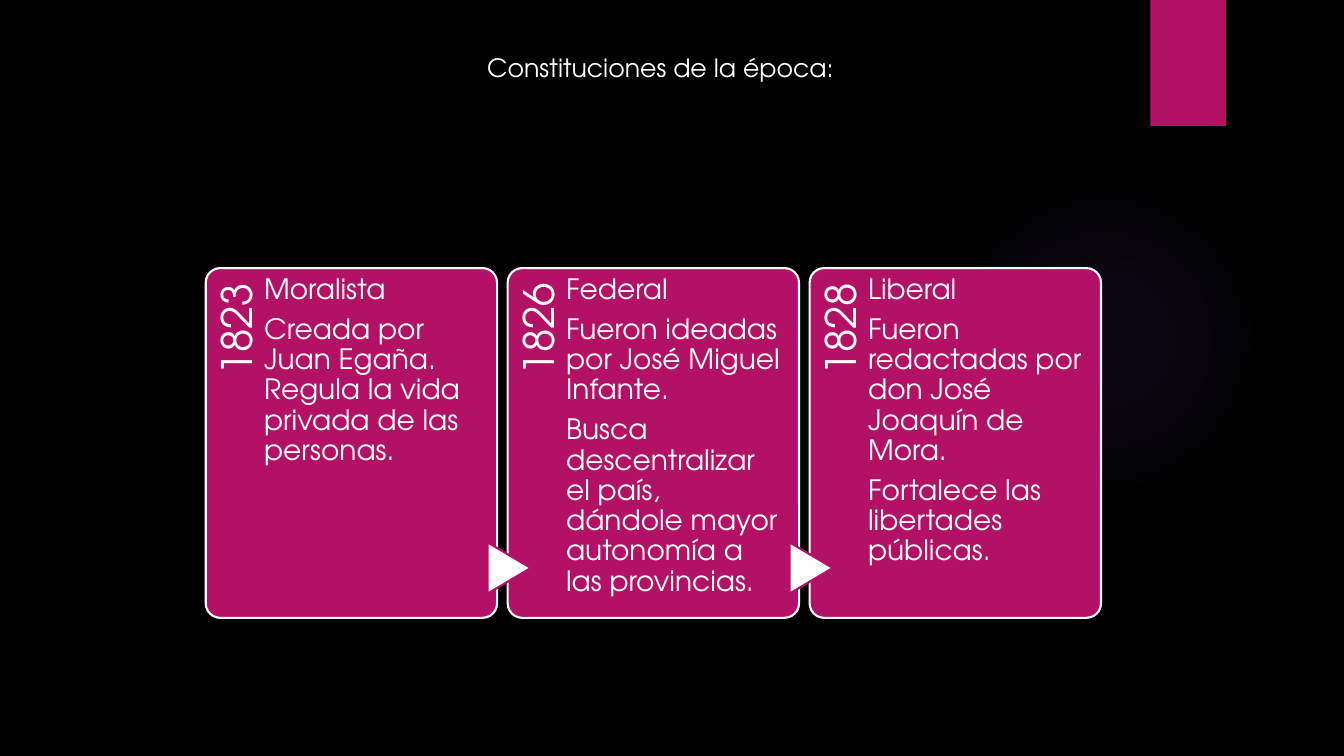
from dataclasses import dataclass

from lxml import etree
from pptx import Presentation
from pptx.dml.color import RGBColor
from pptx.enum.shapes import MSO_SHAPE
from pptx.enum.text import MSO_ANCHOR, MSO_AUTO_SIZE, PP_ALIGN
from pptx.oxml import parse_xml
from pptx.oxml.ns import nsdecls
from pptx.util import Inches, Pt

RECTANGLE = MSO_SHAPE.RECTANGLE
ROUNDED = MSO_SHAPE.ROUNDED_RECTANGLE
TRIANGLE = MSO_SHAPE.FLOWCHART_EXTRACT
OVAL = MSO_SHAPE.OVAL
TOP = MSO_ANCHOR.TOP
GROW = MSO_AUTO_SIZE.SHAPE_TO_FIT_TEXT
FIXED = MSO_AUTO_SIZE.NONE
LEFT, CENTER, RIGHT = PP_ALIGN.LEFT, PP_ALIGN.CENTER, PP_ALIGN.RIGHT


@dataclass(frozen=True)
class Theme:
    """Colours, font and type sizes of the slide."""
    background: str = "000000"
    accent: str = "B31166"
    light: str = "FFFFFF"
    glow: str = "9B6BF2"
    font: str = "TeX Gyre Adventor"
    title: int = 18
    body: int = 20
    year: int = 30
    outline: float = 1.5


@dataclass(frozen=True)
class Area:
    """A rectangle on the slide, in inches."""
    left: float
    top: float
    width: float
    height: float

    def lengths(self) -> list:
        """Return the four measures as lengths."""
        return [Inches(n) for n in (self.left, self.top, self.width, self.height)]


@dataclass(frozen=True)
class Constitution:
    """The year of a constitution and the paragraphs about it."""
    year: str
    paragraphs: tuple[str, ...]


THEME = Theme()
CARD = Area(2.04, 2.66, 2.89, 3.47)
CARD_STEP = 2.995
GLOW_STOPS = ((0, 7), (36, 6), (69, 0))
CONSTITUTIONS = (
    Constitution("1823", (
        "Moralista",
        "Creada por Juan Egaña. Regula la vida privada de las personas.")),
    Constitution("1826", (
        "Federal",
        "Fueron ideadas por José Miguel Infante.",
        "Busca descentralizar el país, dándole mayor autonomía a las provincias.")),
    Constitution("1828", (
        "Liberal",
        "Fueron redactadas por don José Joaquín de Mora.",
        "Fortalece las libertades públicas.")),
)


def add_block(page, kind, area: Area, fill: str, line: str | None = None):
    """Add a flat filled shape, outlined when a line colour is given."""
    block = page.shapes.add_shape(kind, *area.lengths())
    block.shadow.inherit = False
    block.fill.solid()
    block.fill.fore_color.rgb = RGBColor.from_string(fill)
    if line:
        block.line.color.rgb = RGBColor.from_string(line)
        block.line.width = Pt(THEME.outline)
    else:
        block.line.fill.background()
    return block


def add_text(page, area: Area, paragraphs: tuple[str, ...], *, size: int,
             align=LEFT, insets=(0.1, 0.05, 0.1, 0.05), spacing: float = 1.0,
             after: float = 0, rotation: int = 0, fit=FIXED) -> None:
    """Add a wrapped text box with one format for all its paragraphs."""
    box = page.shapes.add_textbox(*area.lengths())
    box.rotation = rotation
    frame = box.text_frame
    frame.word_wrap = True
    frame.auto_size = fit
    frame.vertical_anchor = TOP
    (frame.margin_left, frame.margin_top,
     frame.margin_right, frame.margin_bottom) = [Inches(n) for n in insets]
    for index, text in enumerate(paragraphs):
        para = frame.add_paragraph() if index else frame.paragraphs[0]
        para.alignment = align
        para.line_spacing = spacing
        para.space_after = Pt(after)
        span = para.add_run()
        span.text = text
        span.font.name = THEME.font
        span.font.size = Pt(size)
        span.font.color.rgb = RGBColor.from_string(THEME.light)


def add_glow(page) -> None:
    """Add the faint circle that fades out towards its edge."""
    glow = add_block(page, OVAL, Area(9.41, 1.83, 3.08, 3.08), THEME.glow)
    stops = "".join(
        f'<a:gs pos="{position * 1000}"><a:srgbClr val="{THEME.glow}">'
        f'<a:alpha val="{opacity * 1000}"/></a:srgbClr></a:gs>'
        for position, opacity in GLOW_STOPS)
    gradient: etree.ElementBase = parse_xml(
        f'<a:gradFill {nsdecls("a")}><a:gsLst>{stops}</a:gsLst><a:path path="circle">'
        '<a:fillToRect l="50000" t="50000" r="50000" b="50000"/></a:path></a:gradFill>')
    properties = glow.fill._xPr
    properties.replace(properties.solidFill, gradient)


def add_card(page, index: int, constitution: Constitution) -> None:
    """Add one card, with an arrow from the card before it."""
    left = CARD.left + index * CARD_STEP
    card = add_block(page, ROUNDED, Area(left, CARD.top, CARD.width, CARD.height),
                     THEME.accent, THEME.light)
    card.adjustments[0] = 0.05
    add_text(page, Area(left - 1.14, 3.79, 2.85, 0.58), (constitution.year,),
             size=THEME.year, align=RIGHT, insets=(0, 0.11, 0.15, 0),
             spacing=0.9, rotation=270)
    if index:
        arrow = add_block(page, TRIANGLE, Area(left - 0.24, 5.42, 0.51, 0.43),
                          THEME.light, THEME.accent)
        arrow.rotation = 90
    add_text(page, Area(left + 0.58, CARD.top, 2.16, CARD.height),
             constitution.paragraphs, size=THEME.body, insets=(0, 0.07, 0, 0),
             spacing=0.9, after=7)


def main() -> None:
    """Build the slide and save it."""
    deck = Presentation()
    deck.slide_width, deck.slide_height = Inches(13.33), Inches(7.5)
    page = deck.slides.add_slide(deck.slide_layouts[6])
    page.background.fill.solid()
    page.background.fill.fore_color.rgb = RGBColor.from_string(THEME.background)
    add_glow(page)
    add_block(page, RECTANGLE, Area(11.41, 0, 0.75, 1.25), THEME.accent)
    for index, constitution in enumerate(CONSTITUTIONS):
        add_card(page, index, constitution)
    add_text(page, Area(2.04, 0.47, 9.02, 0.4), ("Constituciones de la época:",),
             size=THEME.title, align=CENTER, fit=GROW)
    deck.save("out.pptx")


if __name__ == "__main__":
    main()
